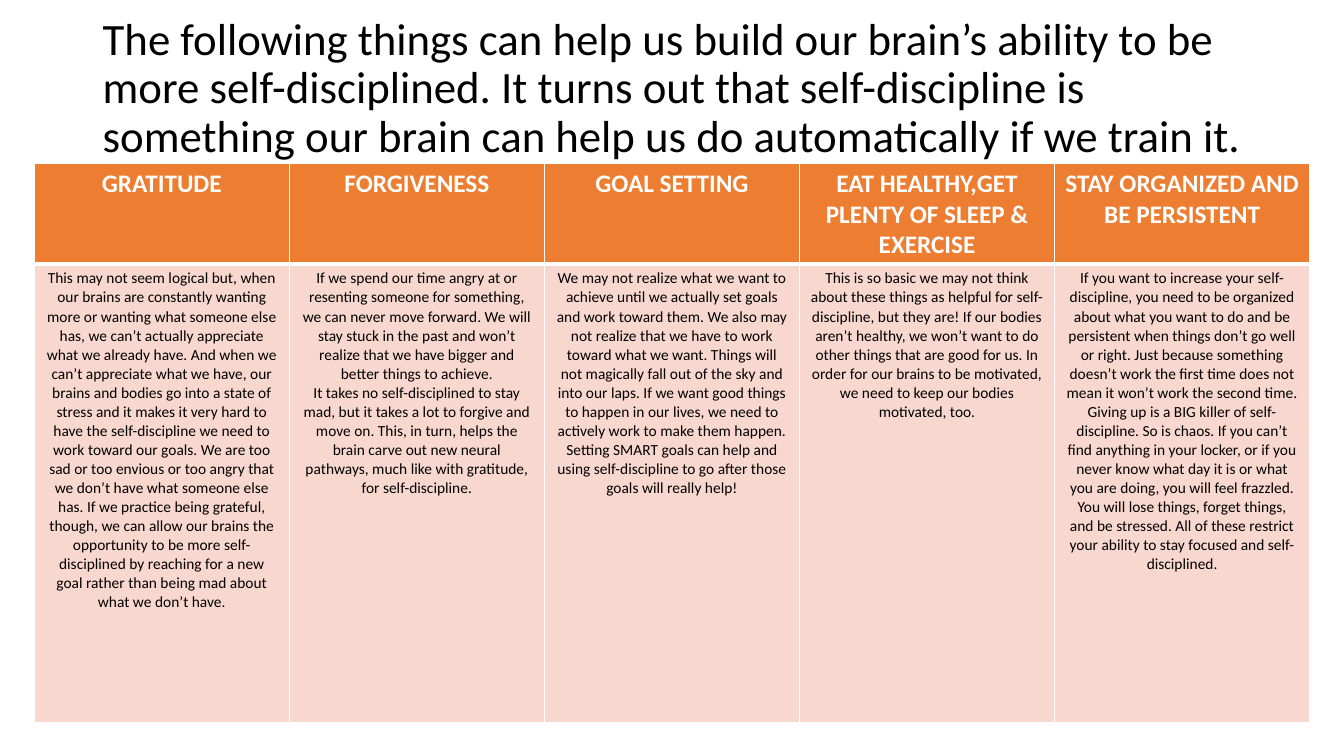
from dataclasses import dataclass

from lxml.etree import SubElement
from pptx import Presentation
from pptx.dml.color import RGBColor
from pptx.enum.text import MSO_ANCHOR, PP_ALIGN
from pptx.oxml.ns import qn
from pptx.slide import Slide
from pptx.table import _Cell
from pptx.text.text import TextFrame
from pptx.util import Emu, Pt

EMU_PER_PX = 9144  # 100 px to the inch


@dataclass(frozen=True)
class Theme:
    font: str = "Calibri"
    text: str = "000000"
    header_text: str = "FFFFFF"
    header_fill: str = "ED7D31"
    body_fill: str = "F8D7CE"
    border: str = "FFFFFF"
    title_size: int = 32
    header_size: int = 18
    body_size: int = 11
    thin_line: int = 1
    thick_line: int = 3


@dataclass(frozen=True)
class Habit:
    heading: str
    paragraphs: tuple[str, ...]


THEME = Theme()
COLUMN_WIDTH = 253
HEADER_HEIGHT = 100
BODY_HEIGHT = 455

TITLE = (
    "The following things can help us build our brain’s ability to be more self-disciplined. "
    "It turns out that self-discipline is something our brain can help us do automatically "
    "if we train it."
)

HABITS = (
    Habit("GRATITUDE", (
        "This may not seem logical but, when our brains are constantly wanting more or wanting "
        "what someone else has, we can’t actually appreciate what we already have. And when we "
        "can’t appreciate what we have, our brains and bodies go into a state of stress and it "
        "makes it very hard to have the self-discipline we need to work toward our goals. We are "
        "too sad or too envious or too angry that we don’t have what someone else has. If we "
        "practice being grateful, though, we can allow our brains the opportunity to be more "
        "self-disciplined by reaching for a new goal rather than being mad about what we don’t "
        "have.",
    )),
    Habit("FORGIVENESS", (
        "If we spend our time angry at or resenting someone for something, we can never move "
        "forward. We will stay stuck in the past and won’t realize that we have bigger and "
        "better things to achieve.",
        "It takes no self-disciplined to stay mad, but it takes a lot to forgive and move on. "
        "This, in turn, helps the brain carve out new neural pathways, much like with gratitude, "
        "for self-discipline.",
    )),
    Habit("GOAL SETTING", (
        "We may not realize what we want to achieve until we actually set goals and work toward "
        "them. We also may not realize that we have to work toward what we want. Things will not "
        "magically fall out of the sky and into our laps. If we want good things to happen in our "
        "lives, we need to actively work to make them happen. Setting SMART goals can help and "
        "using self-discipline to go after those",
        "goals will really help!",
    )),
    Habit("EAT HEALTHY,GET PLENTY OF SLEEP & EXERCISE", (
        "This is so basic we may not think about these things as helpful for self-discipline, but "
        "they are! If our bodies aren’t healthy, we won’t want to do other things that are good "
        "for us. In order for our brains to be motivated, we need to keep our bodies motivated, "
        "too.",
    )),
    Habit("STAY ORGANIZED AND BE PERSISTENT", (
        "If you want to increase your self-discipline, you need to be organized about what you "
        "want to do and be persistent when things don’t go well or right. Just because something "
        "doesn’t work the first time does not mean it won’t work the second time. Giving up is a "
        "BIG killer of self-discipline. So is chaos. If you can’t find anything in your locker, "
        "or if you never know what day it is or what you are doing, you will feel frazzled. You "
        "will lose things, forget things, and be stressed. All of these restrict your ability to "
        "stay focused and self-disciplined.",
    )),
)


def px(length: int) -> Emu:
    return Emu(length * EMU_PER_PX)


def write_text(frame: TextFrame, *paragraphs: str, size: int, color: str = THEME.text,
               bold: bool = False, align: PP_ALIGN = PP_ALIGN.LEFT,
               line_spacing: float = 1.0) -> None:
    frame.word_wrap = True
    for index, text in enumerate(paragraphs):
        paragraph = frame.add_paragraph() if index else frame.paragraphs[0]
        paragraph.alignment = align
        paragraph.line_spacing = line_spacing
        run = paragraph.add_run()
        run.text = text
        run.font.name = THEME.font
        run.font.size = Pt(size)
        run.font.bold = bold
        run.font.color.rgb = RGBColor.from_string(color)


def style_cell(cell: _Cell, fill: str, top: int, bottom: int) -> None:
    """Set the fill and the four borders, with top and bottom widths in points."""
    properties = cell._tc.get_or_add_tcPr()
    widths = {"L": THEME.thin_line, "R": THEME.thin_line, "T": top, "B": bottom}
    for side, width in widths.items():
        line = SubElement(properties, qn(f"a:ln{side}"), w=str(Pt(width)))
        SubElement(SubElement(line, qn("a:solidFill")), qn("a:srgbClr"), val=THEME.border)
    cell.fill.solid()
    cell.fill.fore_color.rgb = RGBColor.from_string(fill)


def add_title(slide: Slide) -> None:
    frame = slide.shapes.add_textbox(px(92), px(40), px(1150), px(145)).text_frame
    frame.vertical_anchor = MSO_ANCHOR.MIDDLE
    frame.margin_bottom = px(53)  # lifts the title clear of the table
    write_text(frame, TITLE, size=THEME.title_size, line_spacing=0.9)


def add_habit_table(slide: Slide) -> None:
    table = slide.shapes.add_table(
        2, len(HABITS), px(34), px(162),
        px(COLUMN_WIDTH * len(HABITS)), px(HEADER_HEIGHT + BODY_HEIGHT),
    ).table
    table.rows[0].height = px(HEADER_HEIGHT)
    table.rows[1].height = px(BODY_HEIGHT)
    for column, habit in enumerate(HABITS):
        table.columns[column].width = px(COLUMN_WIDTH)
        header, body = table.cell(0, column), table.cell(1, column)
        style_cell(header, THEME.header_fill, top=THEME.thin_line, bottom=THEME.thick_line)
        style_cell(body, THEME.body_fill, top=THEME.thick_line, bottom=THEME.thin_line)
        write_text(header.text_frame, habit.heading, size=THEME.header_size,
                   color=THEME.header_text, bold=True, align=PP_ALIGN.CENTER)
        write_text(body.text_frame, *habit.paragraphs, size=THEME.body_size,
                   align=PP_ALIGN.CENTER)


def main() -> None:
    presentation = Presentation()
    presentation.slide_width, presentation.slide_height = px(1333), px(750)
    slide = presentation.slides.add_slide(presentation.slide_layouts[6])
    add_title(slide)
    add_habit_table(slide)
    presentation.save("out.pptx")


if __name__ == "__main__":
    main()
